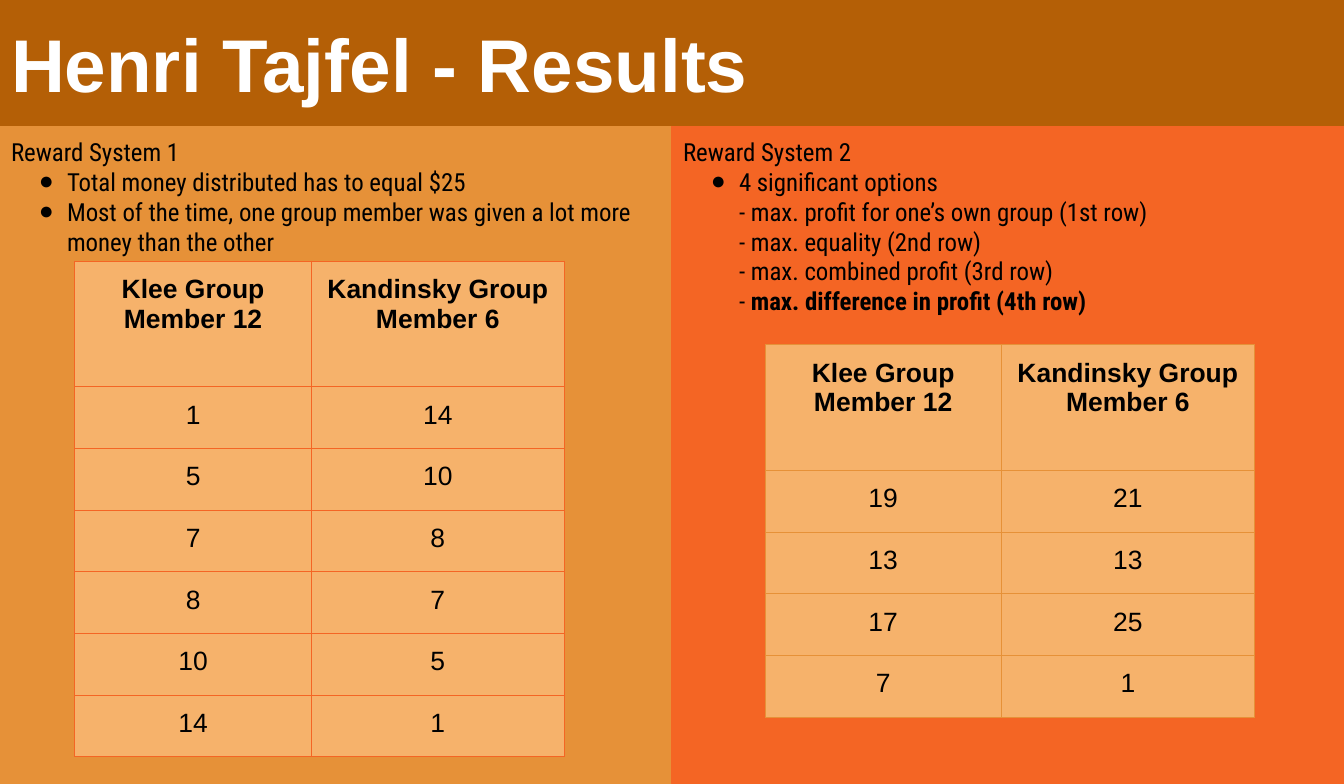
from lxml.etree import SubElement as Sub
from pptx import Presentation
from pptx.dml.color import RGBColor as Rgb
from pptx.enum.shapes import MSO_SHAPE as Kind
from pptx.enum.text import MSO_ANCHOR as Anchor, MSO_AUTO_SIZE as Fit, PP_ALIGN as Align
from pptx.oxml.ns import qn
from pptx.util import Cm, Pt

BROWN, AMBER, FLAME, SAND = "B45F06", "E69138", "F46524", "F6B26B"
HEAD = ("Klee Group Member 12", "Kandinsky Group Member 6")


def paint(fmt, color):
    fmt.solid()
    fmt.fore_color.rgb = Rgb.from_string(color)


def style(para, name, size, color, bold=False):
    font = para.font
    font.name, font.size, font.bold = name, Pt(size), bold
    paint(font.fill, color)


def place(shape, box):
    shape.left, shape.top, shape.width, shape.height = map(Cm, box)


def fit(frame, anchor):
    frame.word_wrap, frame.auto_size = True, Fit.NONE
    frame.vertical_anchor = anchor
    frame.margin_left = frame.margin_right = Cm(0.25)
    frame.margin_top = frame.margin_bottom = Cm(0.25)


def back(slide, box, color):
    rect = slide.shapes.add_shape(Kind.RECTANGLE, *map(Cm, box))
    rect.shadow.inherit = False
    paint(rect.fill, color)
    paint(rect.line.fill, color)
    rect.line.width = Pt(0.75)
    slide.shapes.title.element.addprevious(rect.element)


def banner(slide, box, text):
    back(slide, box, BROWN)
    title = slide.shapes.title
    place(title, box)
    fit(title.text_frame, Anchor.MIDDLE)
    title.text_frame.text = text
    para = title.text_frame.paragraphs[0]
    para.alignment = Align.LEFT
    style(para, "Arial", 48, "FFFFFF", True)


def bullet(para, char):
    props = para._p.get_or_add_pPr()
    props.set("marL", str(Cm(1.27) if char else 0))
    props.set("indent", str(Cm(-0.64) if char else 0))
    if char:
        Sub(props, qn("a:buChar"), char=char)
    else:
        Sub(props, qn("a:buNone"))


def notes(body, box, head, items, strong):
    place(body, box)
    frame = body.text_frame
    fit(frame, Anchor.TOP)
    frame.text = "\n".join([head, *items])
    for num, para in enumerate(frame.paragraphs):
        para.alignment = Align.LEFT
        para.space_before = para.space_after = Pt(0)
        para.line_spacing = 1.0
        bullet(para, "●" if num else "")
        style(para, "Roboto Condensed", 16, "000000")
    if strong:
        run = frame.paragraphs[-1].add_run()
        run.text = strong
        run.font.bold = True


def border(cell, color):
    props = cell._tc.get_or_add_tcPr()
    for side in ("lnL", "lnR", "lnT", "lnB"):
        line = Sub(props, qn("a:" + side), w=str(Pt(0.75)))
        fill = Sub(line, qn("a:solidFill"))
        Sub(fill, qn("a:srgbClr"), val=color)


def grid(slide, left, top, rows, color):
    data = [HEAD, *rows]
    wides, tall, low = (5.36, 5.74), 2.85, 1.4
    size = (sum(wides), tall + low * len(rows))
    table = slide.shapes.add_table(len(data), 2, *map(Cm, (left, top, *size))).table
    for col, wide in zip(table.columns, wides):
        col.width = Cm(wide)
    for num, row in enumerate(data):
        table.rows[num].height = Cm(low if num else tall)
        for col, value in enumerate(row):
            cell = table.cell(num, col)
            border(cell, color)
            paint(cell.fill, SAND)
            cell.margin_left = cell.margin_right = Cm(0.3)
            cell.margin_top = cell.margin_bottom = Cm(0.3)
            cell.text = str(value)
            para = cell.text_frame.paragraphs[0]
            para.alignment = Align.CENTER
            style(para, "Arial", 17, "000000", num == 0)


def panel(slide, body, box, colors, text, shift, rows):
    left, top, wide, tall = box
    back(slide, box, colors[0])
    notes(body, (left, top, wide, 5), *text)
    grid(slide, left + shift[0], top + shift[1], rows, colors[1])


def main():
    deck = Presentation()
    deck.slide_width, deck.slide_height = Cm(30.48), Cm(17.78)
    slide = deck.slides.add_slide(deck.slide_layouts[3])
    first, second = list(slide.placeholders)[1:]
    half, top = 15.24, 2.85
    panel(slide, first, (0, top, half, 17.78 - top), (AMBER, FLAME),
          ("Reward System 1",
           ["Total money distributed has to equal $25",
            "Most of the time, one group member was given a lot more money than the other"],
           ""),
          (1.7, 3.07), [(1, 14), (5, 10), (7, 8), (8, 7), (10, 5), (14, 1)])
    panel(slide, second, (half, top, half, 17.78 - top), (FLAME, AMBER),
          ("Reward System 2",
           ["\v".join(["4 significant options",
                       "- max. profit for one’s own group (1st row)",
                       "- max. equality (2nd row)",
                       "- max. combined profit (3rd row)",
                       "-"])],
           " max. difference in profit (4th row)"),
          (2.11, 4.97), [(19, 21), (13, 13), (17, 25), (7, 1)])
    banner(slide, (0, 0, 30.48, top), "Henri Tajfel - Results")
    deck.save("out.pptx")


if __name__ == "__main__":
    main()
